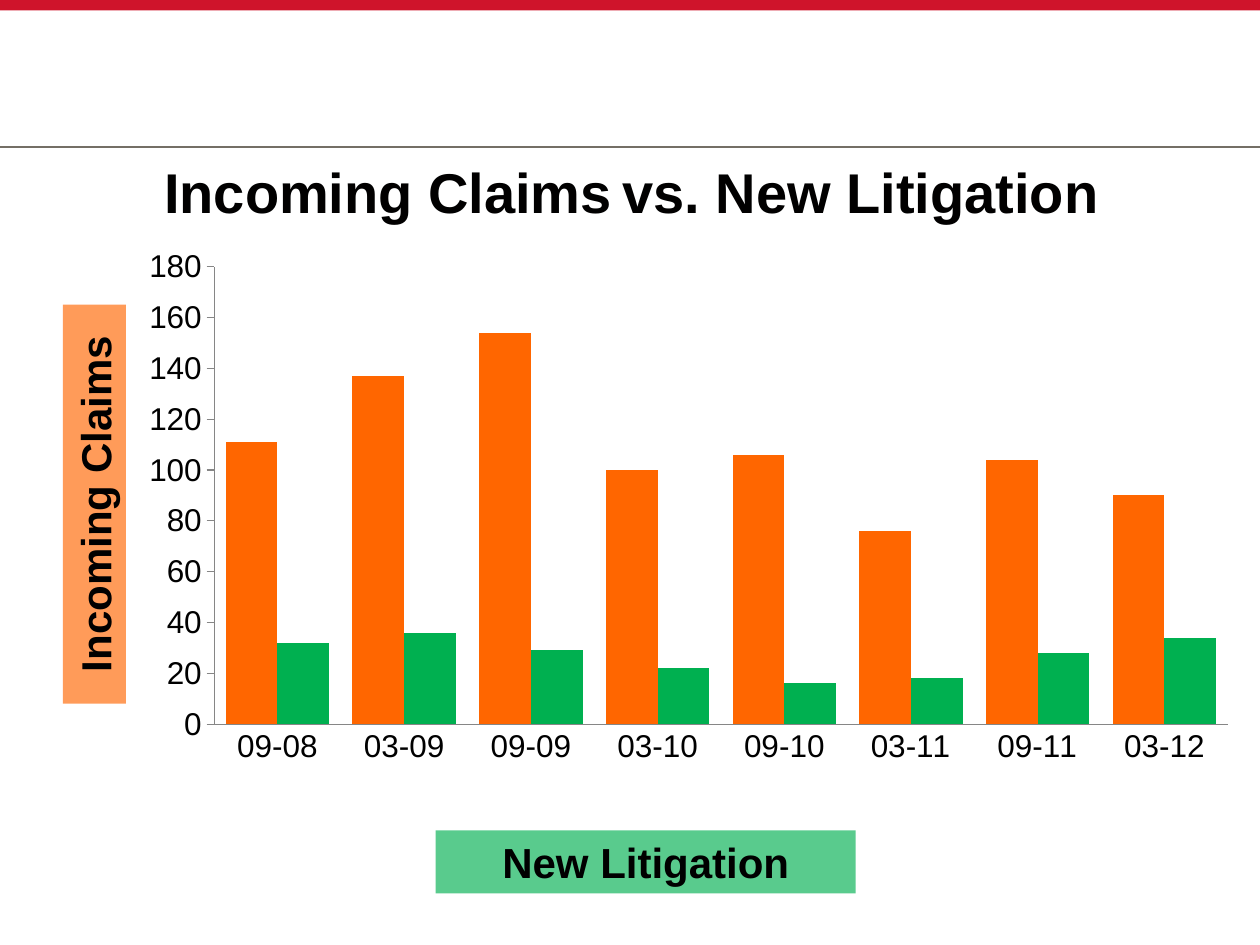
from lxml.etree import SubElement
from pptx import Presentation
from pptx.chart.data import CategoryChartData
from pptx.dml.color import RGBColor
from pptx.enum.chart import XL_CHART_TYPE, XL_TICK_MARK
from pptx.enum.shapes import MSO_CONNECTOR, MSO_SHAPE
from pptx.enum.text import MSO_ANCHOR, PP_ALIGN
from pptx.oxml import parse_xml
from pptx.oxml.ns import nsdecls, qn
from pptx.util import Pt

RED = RGBColor(0xCF, 0x14, 0x2B)
RULE_GRAY = RGBColor(0x74, 0x6F, 0x66)
AXIS_GRAY = RGBColor(0x86, 0x86, 0x86)
ORANGE = RGBColor(0xFF, 0x66, 0x00)
GREEN = RGBColor(0x00, 0xB0, 0x50)
BLACK = RGBColor(0, 0, 0)
TITLE_BLACK = RGBColor(0x01, 0, 0)
FONT = "Arial"

PERIODS = ["09-08", "03-09", "09-09", "03-10", "09-10", "03-11", "09-11", "03-12"]
SERIES = [
    ("Series 1", [111, 137, 154, 100, 106, 76, 104, 90], ORANGE),
    ("Series 2", [32, 36, 29, 22, 16, 18, 28, 34], GREEN),
]
PLOT_LAYOUT = {"x": 0.08, "y": 0.063, "w": 0.92, "h": 0.807}


def place(sp, x, y, w, h):
    sp.left, sp.top, sp.width, sp.height = Pt(x), Pt(y), Pt(w), Pt(h)


def write(sp, text, size, color, anchor):
    """Put one centred bold line in a shape."""
    tf = sp.text_frame
    tf.word_wrap = True
    tf.vertical_anchor = anchor
    tf.text = text
    p = tf.paragraphs[0]
    p.alignment = PP_ALIGN.CENTER
    font = p.runs[0].font
    font.name, font.size, font.bold = FONT, Pt(size), True
    font.color.rgb = color


def add_block(s, x, y, w, h, color):
    sp = s.shapes.add_shape(MSO_SHAPE.RECTANGLE, Pt(x), Pt(y), Pt(w), Pt(h))
    sp.shadow.inherit = False
    sp.fill.solid()
    sp.fill.fore_color.rgb = color
    sp.line.fill.background()
    return sp


def add_header(s, x, y, w, h):
    """Red band along the top and a thin rule along the bottom."""
    add_block(s, x, y, w, 6, RED)
    rule = s.shapes.add_connector(MSO_CONNECTOR.STRAIGHT, Pt(x), Pt(y + h), Pt(x + w), Pt(y + h))
    rule.line.color.rgb = RULE_GRAY
    rule.line.width = Pt(0.75)
    SubElement(rule._element.spPr, qn("a:effectLst"))


def add_title(s, x, y, w, h):
    """Title in two halves that read as one line."""
    title = s.shapes.title
    place(title, x, y, 294, h)
    write(title, "Incoming Claims", 32, TITLE_BLACK, MSO_ANCHOR.BOTTOM)
    second = s.shapes.add_textbox(Pt(x + w - 324), Pt(y), Pt(324), Pt(h))
    write(second, "vs. New Litigation", 32, TITLE_BLACK, MSO_ANCHOR.BOTTOM)


def add_claims_chart(s, x, y, w, h):
    data = CategoryChartData()
    data.categories = PERIODS
    for name, values, _ in SERIES:
        data.add_series(name, values)
    chart = s.shapes.add_chart(
        XL_CHART_TYPE.COLUMN_CLUSTERED, Pt(x), Pt(y), Pt(w), Pt(h), data).chart
    chart.has_title = False
    chart.has_legend = False
    chart.font.name, chart.font.size = FONT, Pt(18)
    chart.font.color.rgb = BLACK

    plot = chart.plots[0]
    plot.gap_width, plot.overlap = 45, 0
    plot.vary_by_categories = False
    for series, (_, _, color) in zip(plot.series, SERIES):
        series.format.fill.solid()
        series.format.fill.fore_color.rgb = color

    value_axis = chart.value_axis
    value_axis.minimum_scale, value_axis.maximum_scale = 0, 180
    value_axis.major_unit = 20
    value_axis.has_major_gridlines = False
    value_axis.major_tick_mark = XL_TICK_MARK.OUTSIDE
    chart.category_axis.major_tick_mark = XL_TICK_MARK.NONE
    for axis in (value_axis, chart.category_axis):
        axis.format.line.color.rgb = AXIS_GRAY
    set_plot_layout(chart)


def set_plot_layout(chart):
    area = chart._chartSpace.chart.plotArea
    for old in area.findall(qn("c:layout")):
        area.remove(old)
    modes = '<c:xMode val="edge"/><c:yMode val="edge"/>'
    sizes = "".join(f'<c:{k} val="{v}"/>' for k, v in PLOT_LAYOUT.items())
    area.insert(0, parse_xml(
        f'<c:layout {nsdecls("c")}><c:manualLayout><c:layoutTarget val="inner"/>'
        f'{modes}{sizes}</c:manualLayout></c:layout>'))


def add_series_label(s, x, y, w, h, text, color, rotation=0):
    sp = add_block(s, x, y, w, h, color)
    sp.rotation = rotation
    SubElement(sp.fill._xPr.find(qn("a:solidFill"))[0], qn("a:alpha"), val="65000")
    write(sp, text, 24, BLACK, MSO_ANCHOR.MIDDLE)


def main():
    prs = Presentation()
    prs.slide_width, prs.slide_height = Pt(720), Pt(540)
    s = prs.slides.add_slide(prs.slide_layouts[5])
    add_header(s, 0, 0, 720, 84)
    add_title(s, 75, 84, 579, 48)
    add_claims_chart(s, 72, 132, 630, 324)
    add_series_label(s, -60, 270, 228, 36, "Incoming Claims", ORANGE, 270)
    add_series_label(s, 249, 474.5, 240, 36, "New Litigation", GREEN)
    prs.save("out.pptx")


if __name__ == "__main__":
    main()
